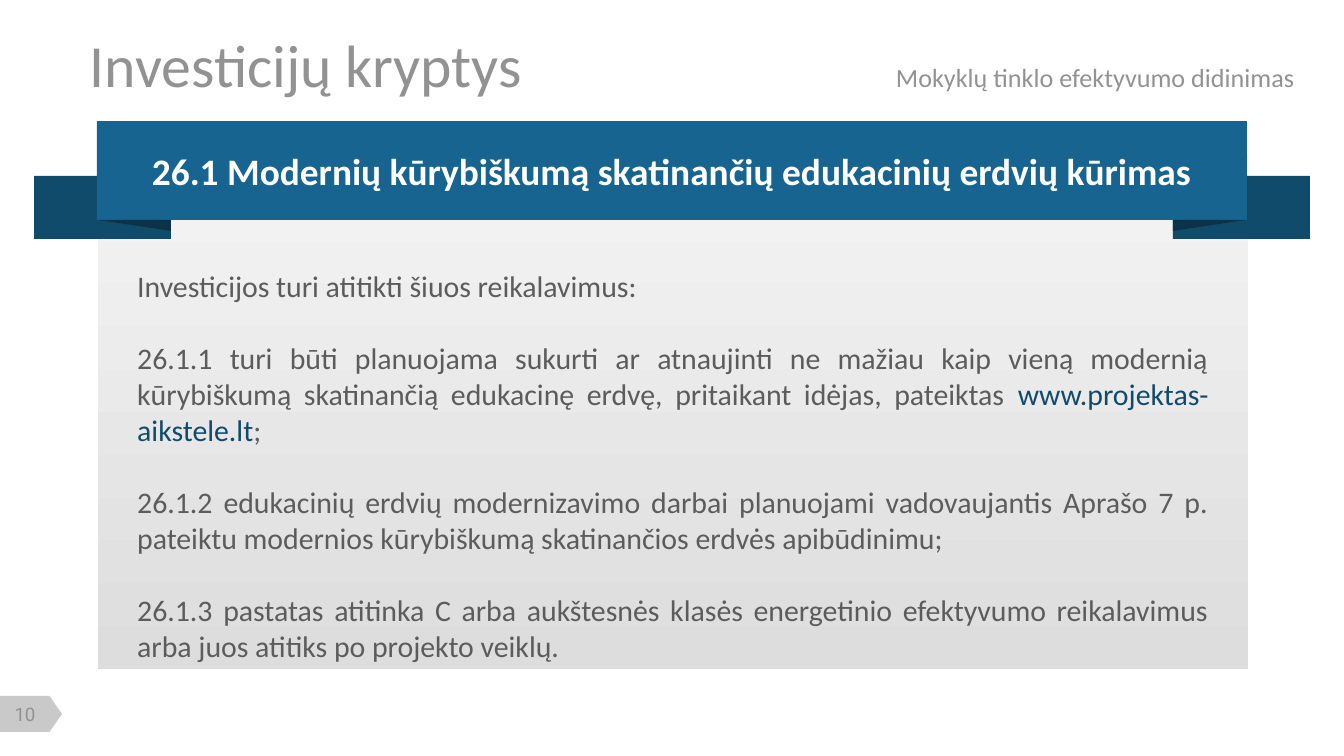
from lxml.etree import SubElement
from pptx import Presentation
from pptx.dml.color import RGBColor
from pptx.enum.shapes import MSO_SHAPE
from pptx.enum.text import MSO_ANCHOR, PP_ALIGN
from pptx.oxml.ns import qn
from pptx.util import Emu, Pt

WIDTH, HEIGHT = 1344, 756
EMU_PER_PX = 9144000 / WIDTH
COLORS = {
    "badge": "C9C9C9",
    "muted": "929292",
    "panel_low": "DDDDDD",
    "panel_high": "F4F4F4",
    "banner": "176490",
    "tail": "114B6C",
    "fold": "0C3248",
    "body": "5C5C5C",
    "white": "FFFFFF",
}
REQUIREMENTS = [
    [("Investicijos turi atitikti šiuos reikalavimus:", "body")],
    [
        ("26.1.1 turi būti planuojama sukurti ar atnaujinti ne mažiau kaip vieną "
         "modernią kūrybiškumą skatinančią edukacinę erdvę, pritaikant idėjas, "
         "pateiktas ", "body"),
        ("www.projektas-aikstele.lt", "tail"),
        (";", "body"),
    ],
    [("26.1.2 edukacinių erdvių modernizavimo darbai planuojami vadovaujantis "
      "Aprašo 7 p. pateiktu modernios kūrybiškumą skatinančios erdvės "
      "apibūdinimu;", "body")],
    [("26.1.3 pastatas atitinka C arba aukštesnės klasės energetinio efektyvumo "
      "reikalavimus arba juos atitiks po projekto veiklų.", "body")],
]


def px(value):
    return Emu(round(value * EMU_PER_PX))


def rgb(name):
    return RGBColor.from_string(COLORS[name])


def finish(shape, color):
    """Give a shape a plain fill, with no outline or shadow."""
    shape.shadow.inherit = False
    shape.line.fill.background()
    shape.fill.solid()
    shape.fill.fore_color.rgb = rgb(color)


def add_block(shapes, bounds, color, preset=MSO_SHAPE.RECTANGLE):
    block = shapes.add_shape(preset, *map(px, bounds))
    finish(block, color)
    return block


def add_fold(shapes, outer, inner, top, bottom):
    """Draw the shaded triangle where the ribbon turns behind the banner."""
    builder = shapes.build_freeform(px(outer), px(top))
    builder.add_line_segments([(px(inner), px(top)), (px(inner), px(bottom))])
    finish(builder.convert_to_shape(), "fold")


def add_box(shapes, bounds, anchor=MSO_ANCHOR.TOP):
    box = shapes.add_textbox(*map(px, bounds))
    box.text_frame.word_wrap = True
    box.text_frame.vertical_anchor = anchor
    return box.text_frame


def add_span(para, text, size, color, font="Calibri", bold=False):
    span = para.add_run()
    span.text = text
    span.font.name = font
    span.font.size = Pt(size)
    span.font.bold = bold
    span.font.color.rgb = rgb(color)


def add_page_number(page):
    add_block(page.shapes, (13, 683, 36, 62), "badge",
              MSO_SHAPE.FLOWCHART_OFFPAGE_CONNECTOR).rotation = 270
    frame = add_box(page.shapes, (3, 703, 44, 23), MSO_ANCHOR.MIDDLE)
    frame.margin_left = frame.margin_right = 0
    frame.margin_top = frame.margin_bottom = 0
    para = frame.paragraphs[0]
    para.alignment = PP_ALIGN.CENTER
    add_span(para, "10", 10, "muted", "Roboto")


def add_panel(page):
    panel = add_block(page.shapes, (98, 155, 1150, 514), "panel_low")
    panel.fill.gradient()
    panel.fill.gradient_angle = 90
    for stop, color in zip(panel.fill.gradient_stops, ("panel_low", "panel_high")):
        stop.color.rgb = rgb(color)


def add_ribbon(page):
    shapes = page.shapes.add_group_shape().shapes
    for left in (34, 1173):
        add_block(shapes, (left, 176, 137, 63), "tail")
    banner = add_block(shapes, (97, 121, 1150, 99), "banner")
    frame = banner.text_frame
    frame.word_wrap = True
    frame.vertical_anchor = MSO_ANCHOR.MIDDLE
    para = frame.paragraphs[0]
    para.alignment = PP_ALIGN.CENTER
    add_span(para, "26.1 Modernių kūrybiškumą skatinančių edukacinių erdvių kūrimas",
             20, "white", bold=True)
    for outer, inner in ((98, 171), (1246, 1173)):
        add_fold(shapes, outer, inner, 220, 231)


def add_requirements(page):
    frame = add_box(page.shapes, (124, 261, 1098, 448))
    for index, spans in enumerate(REQUIREMENTS):
        para = frame.add_paragraph() if index else frame.paragraphs[0]
        para.alignment = PP_ALIGN.JUSTIFY
        if index:
            para.space_before = Pt(19.5)
        for text, color in spans:
            add_span(para, text, 16, color)


def add_title(page):
    frame = add_box(page.shapes, (90, 38, 1230, 52), MSO_ANCHOR.MIDDLE)
    frame.margin_left = 0
    para = frame.paragraphs[0]
    tabs = SubElement(para._p.get_or_add_pPr(), qn("a:tabLst"))
    SubElement(tabs, qn("a:tab"), pos=str(px(806)), algn="l")
    add_span(para, "Investicijų kryptys\t", 32, "muted")
    add_span(para, "Mokyklų tinklo efektyvumo didinimas", 14, "muted")


def main():
    deck = Presentation()
    deck.slide_width, deck.slide_height = px(WIDTH), px(HEIGHT)
    page = deck.slides.add_slide(deck.slide_layouts[6])
    add_page_number(page)
    add_panel(page)
    add_ribbon(page)
    add_requirements(page)
    add_title(page)
    deck.save("out.pptx")


if __name__ == "__main__":
    main()
